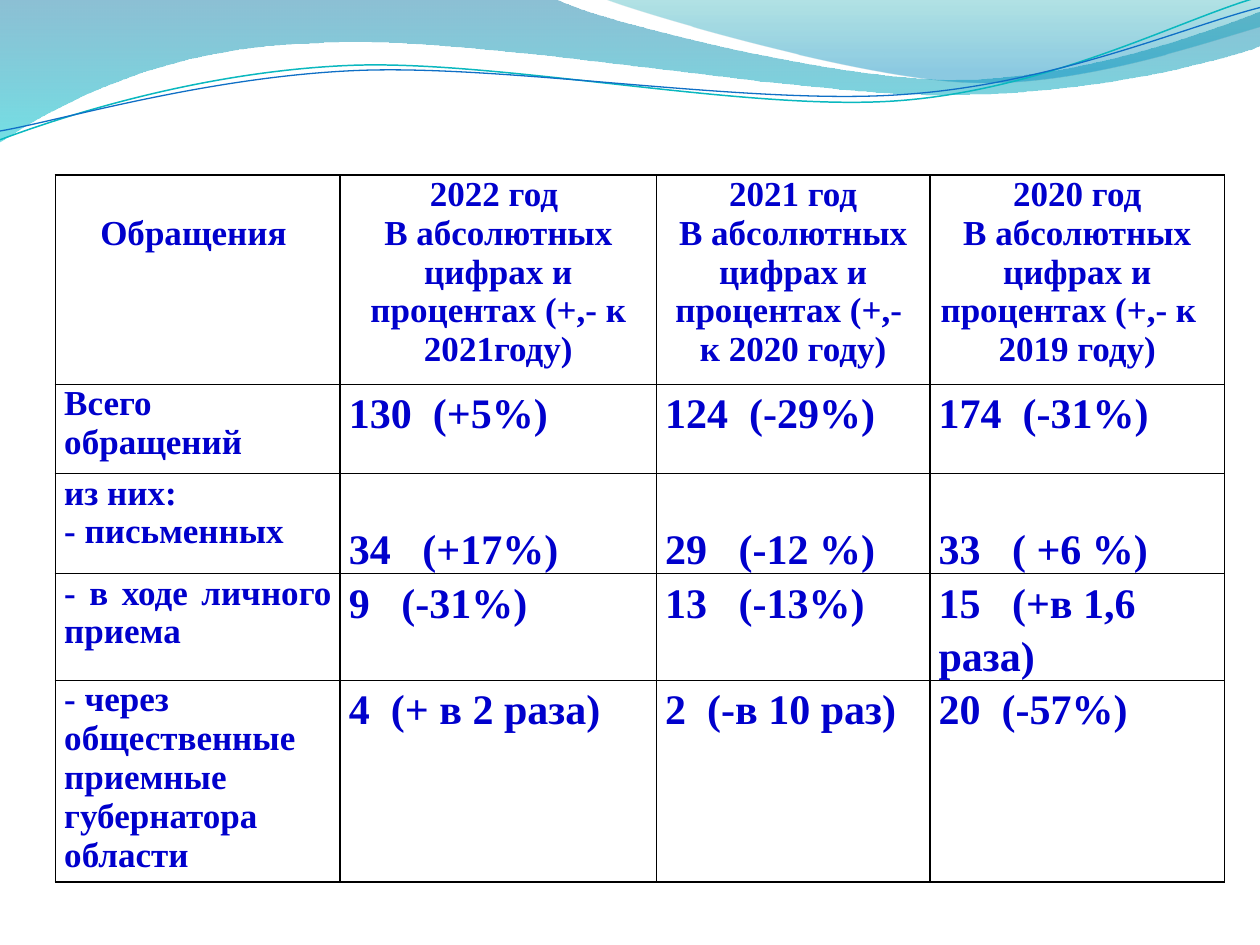
from lxml import etree
from pptx import Presentation
from pptx.dml.color import RGBColor
from pptx.enum.text import MSO_ANCHOR, PP_ALIGN
from pptx.oxml.ns import qn
from pptx.util import Inches, Pt

CENTER, LEFT, JUSTIFY = PP_ALIGN.CENTER, PP_ALIGN.LEFT, PP_ALIGN.JUSTIFY
TOP = MSO_ANCHOR.TOP

TEXT_BLUE = RGBColor(0x00, 0x00, 0xCC)
BORDER_BLACK = RGBColor(0x00, 0x00, 0x00)
DEEP_BLUE = RGBColor(0x00, 0x74, 0xA1)
CYAN = RGBColor(0x00, 0xC6, 0xCF)
TEAL = RGBColor(0x00, 0xA1, 0xA9)
SKY_BLUE = RGBColor(0x00, 0x8B, 0xBF)
LINE_TEAL = RGBColor(0x0A, 0xB8, 0xBF)
LINE_BLUE = RGBColor(0x0F, 0x6F, 0xC6)

FONT = "Times New Roman"

# Outlines in inches: the start, then lines (x, y) and Bezier curves (three points).
WIDE_WAVE = [
    (0, 0), (4.4, -0.01),
    (4.76, 0.17, 6.64, 0.63, 7.58, 0.63), (8.53, 0.63, 9.58, 0.26, 10, 0.09),
    (10.01, 0.36),
    (9.83, 0.44, 8.7, 0.76, 7.46, 0.75), (6.22, 0.75, 3.82, 0.28, 2.57, 0.34),
    (1.29, 0.36, 0.46, 0.83, -0.01, 1.13),
]
RIGHT_WAVE = [
    (4.79, -0.01),
    (5.09, 0.11, 6.82, 0.62, 7.69, 0.65), (8.56, 0.69, 9.61, 0.32, 10, 0.21),
    (10, 0),
]
TEAL_CURVE = [
    (0, 1.11),
    (0.48, 0.93, 1.58, 0.57, 2.77, 0.52), (3.95, 0.47, 5.93, 0.89, 7.13, 0.8),
    (8.33, 0.71, 9.38, 0.15, 9.98, -0.02),
]
BLUE_CURVE = [
    (0, 1.04),
    (0.47, 0.96, 1.64, 0.61, 2.83, 0.56), (4.03, 0.51, 5.97, 0.84, 7.17, 0.75),
    (8.36, 0.67, 9.41, 0.21, 10, 0.06),
]

COLUMN_WIDTHS = [2.26, 2.51, 2.17, 2.34]
ROW_HEIGHTS = [1.66, 0.71, 0.79, 0.71, 1.6]
HEADERS = [
    ["Обращения "],
    ["2022 год ", "В абсолютных цифрах и процентах (+,- к 2021году)"],
    ["2021 год", "В абсолютных цифрах и процентах (+,-  к 2020 году)"],
    ["2020 год", "В абсолютных цифрах и процентах (+,- к   2019 году)"],
]
# Label lines, label alignment, values, extra space above the values.
BODY_ROWS = [
    (["Всего обращений"], LEFT,
     ["130  (+5%)", "124  (-29%)", "174  (-31%)"], 0),
    (["из них:", "- письменных"], JUSTIFY,
     ["34   (+17%)", "29   (-12 %)", "33   ( +6 %)"], 0.37),
    (["- в ходе личного приема"], JUSTIFY,
     ["9   (-31%)", "13   (-13%)", "15   (+в 1,6 раза)"], 0),
    (["- через общественные приемные губернатора области"], LEFT,
     ["4  (+ в 2 раза)", "2  (-в 10 раз)", "20  (-57%)"], 0),
]


def add_outline(page, outline, close):
    """Build straight segments through all points, then join triples into Bezier curves."""
    points = [(Inches(x), Inches(y)) for segment in outline
              for x, y in zip(segment[::2], segment[1::2])]
    builder = page.shapes.build_freeform(*points[0], scale=1.0)
    builder.add_line_segments(points[1:], close=close)
    shape = builder.convert_to_shape()
    shape.shadow.inherit = False

    lines = shape._element.spPr.iter(qn("a:lnTo"))
    remaining = iter(list(lines))
    for segment in outline[1:]:
        first = next(remaining)
        if len(segment) == 6:
            first.tag = qn("a:cubicBezTo")
            for line in (next(remaining), next(remaining)):
                first.append(line[0])
                line.getparent().remove(line)
    return shape


def add_wave(page, outline, stops):
    """Add a wave with a downward gradient; stops hold position, colour, opacity in %."""
    wave = add_outline(page, outline, close=True)
    wave.line.fill.background()
    wave.fill.gradient()
    wave.fill.gradient_angle = 270
    for stop, (position, color, _) in zip(wave.fill.gradient_stops, stops):
        stop.position = position
        stop.color.rgb = color
    colors = wave._element.spPr.iter(qn("a:srgbClr"))
    for color_node, (_, _, opacity) in zip(colors, stops):
        etree.SubElement(color_node, qn("a:alpha"), val=str(opacity * 1000))


def add_curve(page, outline, color, width):
    curve = add_outline(page, outline, close=False)
    curve.fill.background()
    curve.line.color.rgb = color
    curve.line.width = Pt(width)


def add_wave_banner(page):
    add_wave(page, WIDE_WAVE, [(0, DEEP_BLUE, 45), (1, CYAN, 55)])
    add_wave(page, RIGHT_WAVE, [(0, TEAL, 30), (0.8, SKY_BLUE, 45)])
    add_curve(page, TEAL_CURVE, LINE_TEAL, 0.85)
    add_curve(page, BLUE_CURVE, LINE_BLUE, 0.75)


def set_borders(cell):
    properties = cell._tc.get_or_add_tcPr()
    for index, side in enumerate(("a:lnL", "a:lnR", "a:lnT", "a:lnB")):
        border = etree.Element(qn(side), w=str(Pt(1)))
        fill = etree.SubElement(border, qn("a:solidFill"))
        etree.SubElement(fill, qn("a:srgbClr"), val=str(BORDER_BLACK))
        properties.insert(index, border)


def fill_cell(cell, lines, size, alignment, line_spacing=None, top=0):
    cell.fill.background()
    set_borders(cell)
    cell.margin_left = cell.margin_right = Inches(0.07)
    cell.margin_top, cell.margin_bottom = Inches(top), 0
    cell.vertical_anchor = TOP
    for index, line in enumerate(lines):
        frame = cell.text_frame
        para = frame.add_paragraph() if index else frame.paragraphs[0]
        para.alignment = alignment
        para.line_spacing = line_spacing
        span = para.add_run()
        span.text = line
        span.font.name = FONT
        span.font.size = Pt(size)
        span.font.bold = True
        span.font.color.rgb = TEXT_BLUE


def add_appeals_table(page, left, top, width, height):
    table = page.shapes.add_table(len(ROW_HEIGHTS), len(COLUMN_WIDTHS),
                                  left, top, width, height).table
    table.first_row = table.horz_banding = False
    for column, column_width in zip(table.columns, COLUMN_WIDTHS):
        column.width = Inches(column_width)
    for row, row_height in zip(table.rows, ROW_HEIGHTS):
        row.height = Inches(row_height)

    for index, lines in enumerate(HEADERS):
        fill_cell(table.cell(0, index), lines, 20, CENTER, top=0 if index else 0.31)
    for row, (label, alignment, values, space) in enumerate(BODY_ROWS, start=1):
        fill_cell(table.cell(row, 0), label, 20, alignment)
        for column, value in enumerate(values, start=1):
            fill_cell(table.cell(row, column), [value], 24, LEFT, 1.15, space)


def main():
    deck = Presentation()
    deck.slide_width, deck.slide_height = Inches(10), Inches(7.5)
    page = deck.slides.add_slide(deck.slide_layouts[6])
    add_wave_banner(page)
    add_appeals_table(page, Inches(0.44), Inches(1.39), Inches(9.28), Inches(5.88))
    deck.save("out.pptx")


if __name__ == "__main__":
    main()
